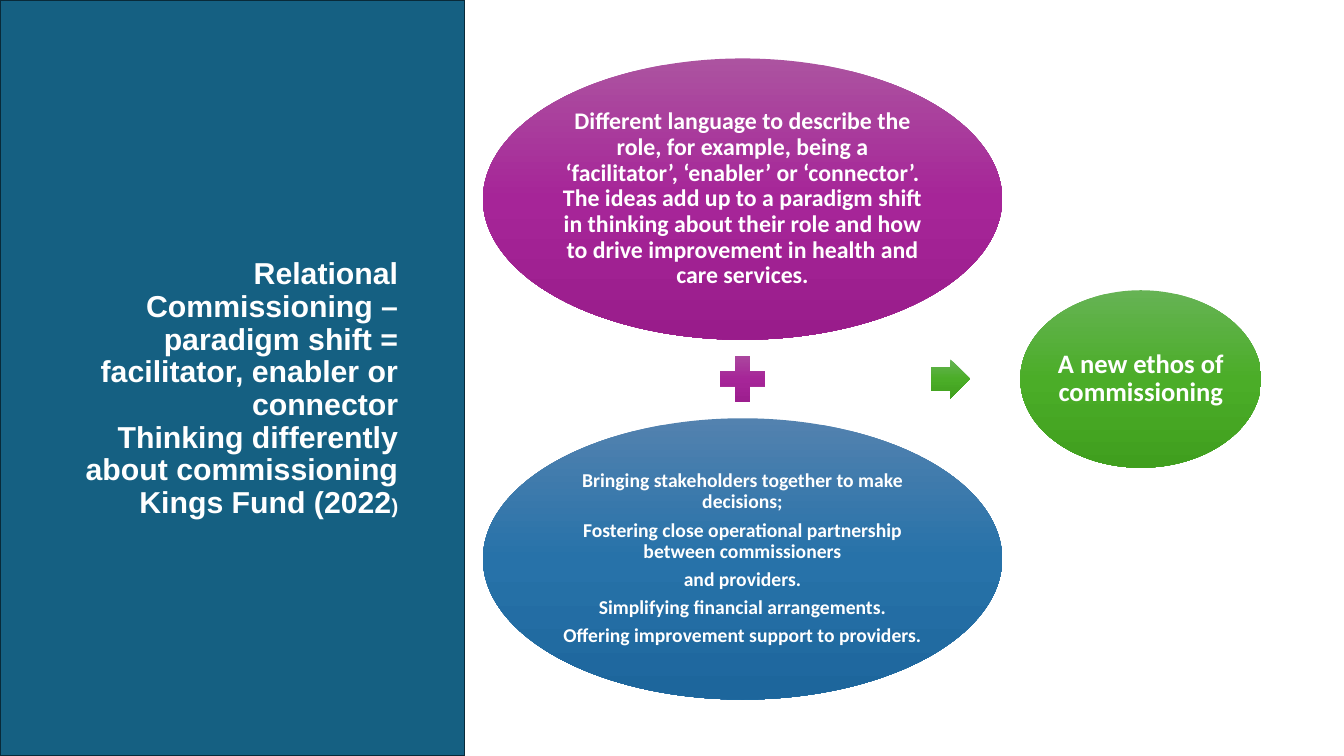
from copy import deepcopy

from pptx import Presentation
from pptx.dml.color import RGBColor
from pptx.enum.shapes import MSO_SHAPE as Preset
from pptx.enum.text import MSO_ANCHOR as Anchor, MSO_AUTO_SIZE as AutoSize, PP_ALIGN as Align
from pptx.oxml.ns import qn
from pptx.util import Inches, Pt

WHITE = RGBColor(0xFF, 0xFF, 0xFF)
TEAL = RGBColor(0x15, 0x60, 0x82)
DARK_TEAL = RGBColor(0x09, 0x2A, 0x39)
PURPLES = [RGBColor(0xAC, 0x53, 0xA0), RGBColor(0xA6, 0x25, 0x98), RGBColor(0x99, 0x1C, 0x8B)]
BLUES = [RGBColor(0x53, 0x82, 0xAF), RGBColor(0x27, 0x72, 0xA9), RGBColor(0x1D, 0x66, 0x9C)]
GREENS = [RGBColor(0x66, 0xB3, 0x54), RGBColor(0x4B, 0xAD, 0x28), RGBColor(0x40, 0x9F, 0x1E)]

deck = Presentation()
deck.slide_width, deck.slide_height = Inches(13.33), Inches(7.5)
slide = deck.slides.add_slide(deck.slide_layouts[5])
column, row = deck.slide_width / 100, deck.slide_height / 100


def box(left, top, width, height):
    return int(left * column), int(top * row), int(width * column), int(height * row)


def write(paragraph, text, size, font_name, align):
    paragraph.text = text
    paragraph.alignment = align
    paragraph.line_spacing = 0.9
    paragraph.font.name = font_name
    paragraph.font.size = Pt(size)
    paragraph.font.bold = True
    paragraph.font.color.rgb = WHITE


panel = slide.shapes.add_shape(Preset.RECTANGLE, *box(0, 0, 34.58, 100))
panel.shadow.inherit = False
panel.fill.solid()
panel.fill.fore_color.rgb = TEAL
panel.line.color.rgb = DARK_TEAL
panel.line.width = Pt(1)

title = slide.shapes.title
title.left, title.top, title.width, title.height = box(4.8, 24.53, 25.58, 47.6)
panel._element.getparent().insert(2, panel._element)
heading = title.text_frame
heading.word_wrap = True
heading.auto_size = AutoSize.NONE
heading.vertical_anchor = Anchor.BOTTOM
heading.margin_bottom = Inches(0.25)
write(heading.paragraphs[0],
      "Relational Commissioning – paradigm shift = facilitator, enabler or connector\v"
      "Thinking differently about commissioning Kings Fund (2022", 21.6, "Arial", Align.RIGHT)
closing_bracket = heading.paragraphs[0].add_run()
closing_bracket.text = ")"
closing_bracket.font.size = Pt(14.4)

language = ["Different language to describe the role, for example, being a ‘facilitator’, "
            "‘enabler’ or ‘connector’. The ideas add up to a paradigm shift in thinking about "
            "their role and how to drive improvement in health and care services."]
actions = ["Bringing stakeholders together to make decisions;",
           "Fostering close operational partnership between commissioners",
           "and providers.",
           "Simplifying financial arrangements.",
           "Offering improvement support to providers."]
ethos = ["A new ethos of commissioning"]

middle, offset, inputs_centre = 50.13, 23.8, 55.25
equation = [
    (Preset.OVAL, inputs_centre, middle - offset, 38.63, 37.2, PURPLES, language, 17),
    (Preset.MATH_PLUS, inputs_centre, middle, 4.58, 8.13, PURPLES, [], 0),
    (Preset.OVAL, inputs_centre, middle + offset, 38.63, 37.2, BLUES, actions, 14),
    (Preset.RIGHT_ARROW, 70.71, middle, 2.93, 5.2, GREENS, [], 0),
    (Preset.OVAL, 84.88, middle, 17.93, 23.47, GREENS, ethos, 19),
]

for preset, centre_x, centre_y, width, height, shades, statements, size in equation:
    part = slide.shapes.add_shape(
        preset, *box(centre_x - width / 2, centre_y - height / 2, width, height))
    part.shadow.inherit = False
    part.line.fill.background()
    if preset == Preset.RIGHT_ARROW:
        part.adjustments[0] = 0.6

    part.fill.gradient()
    part.fill.gradient_angle = 270
    stop_list = part._element.spPr.find(".//" + qn("a:gsLst"))
    stop_list.append(deepcopy(stop_list[0]))
    for stop, shade, position in zip(part.fill.gradient_stops, shades, (0, 0.5, 1)):
        stop.color.rgb = shade
        stop.position = position

    frame = part.text_frame
    frame.word_wrap = True
    frame.vertical_anchor = Anchor.MIDDLE
    frame.margin_left = frame.margin_right = frame.margin_top = frame.margin_bottom = Inches(0.02)
    for index, statement in enumerate(statements):
        paragraph = frame.add_paragraph() if index else frame.paragraphs[0]
        write(paragraph, statement, size, "Calibri", Align.CENTER)
        paragraph.space_after = Pt(round(size * 0.35))

deck.save("out.pptx")
